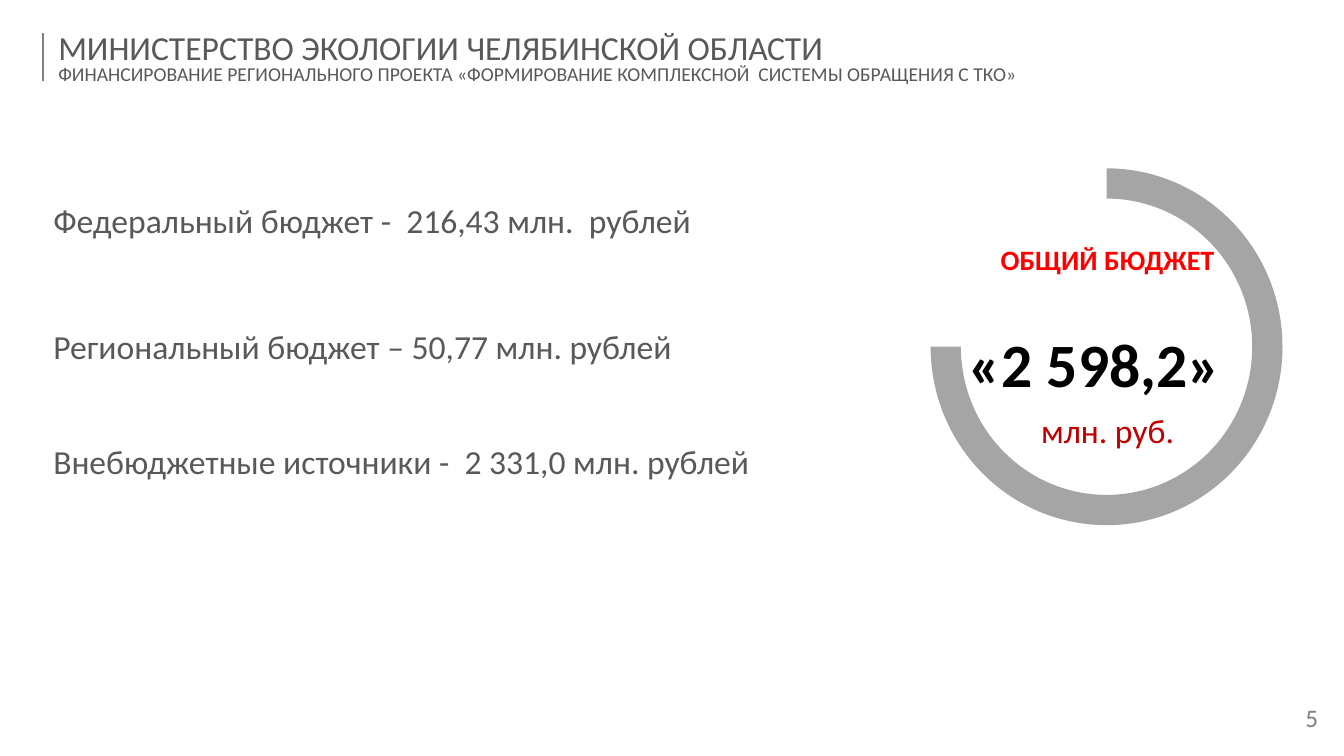
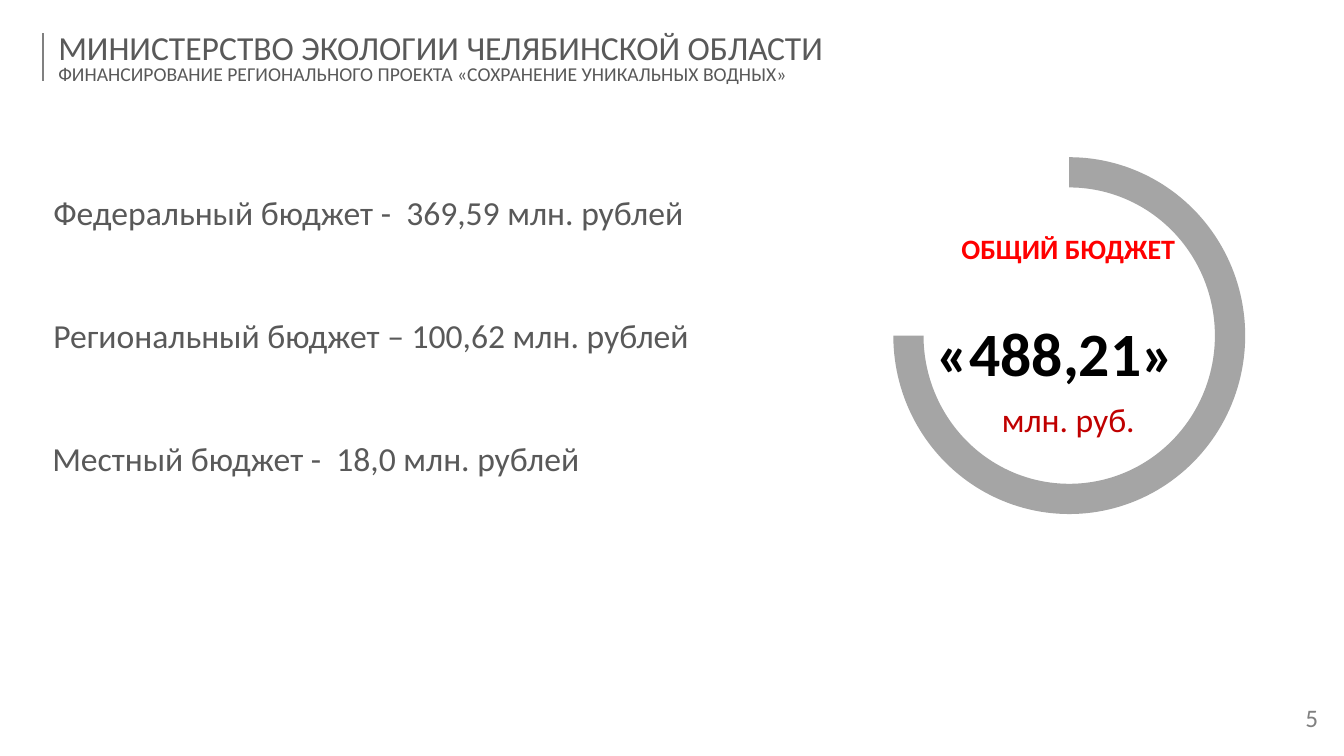
from lxml.etree import SubElement
from pptx import Presentation
from pptx.dml.color import RGBColor
from pptx.enum.shapes import MSO_CONNECTOR as Connector, MSO_SHAPE as Preset
from pptx.enum.text import MSO_ANCHOR as Anchor, PP_ALIGN as Align
from pptx.oxml.ns import qn
from pptx.util import Pt

PX = 9144
FONT = "Calibri"
TEXT, MUTED, RING = "595959", "808080", "A5A5A5"
RED, DARK_RED, BLACK = "FF0000", "C00000", "000000"

MINISTRY = "МИНИСТЕРСТВО ЭКОЛОГИИ ЧЕЛЯБИНСКОЙ ОБЛАСТИ"
PAGE_NUMBER = "5"
TOTAL_LABEL = "ОБЩИЙ БЮДЖЕТ"
TOTAL_UNIT = "млн. руб."

SLIDES = [
    {
        "project": "ФИНАНСИРОВАНИЕ РЕГИОНАЛЬНОГО ПРОЕКТА «ФОРМИРОВАНИЕ КОМПЛЕКСНОЙ  СИСТЕМЫ ОБРАЩЕНИЯ С ТКО»",
        "sources": [
            (43, 193, "Федеральный бюджет -  216,43 млн.  рублей"),
            (43, 318, "Региональный бюджет – 50,77 млн. рублей"),
            (43, 433, "Внебюджетные источники -  2 331,0 млн. рублей"),
        ],
        "total": "«2 598,2»",
        "ring": (923, 167),
        "total_box": (937, 234, 323, 219),
    },
    {
        "project": "ФИНАНСИРОВАНИЕ РЕГИОНАЛЬНОГО ПРОЕКТА «СОХРАНЕНИЕ УНИКАЛЬНЫХ ВОДНЫХ»",
        "sources": [
            (43, 185, "Федеральный бюджет -  369,59 млн. рублей"),
            (43, 308, "Региональный бюджет – 100,62 млн. рублей"),
            (42, 430, "Местный бюджет -  18,0 млн. рублей"),
        ],
        "total": "«488,21»",
        "ring": (886, 156),
        "total_box": (902, 223, 315, 219),
    },
]

SOURCE_SIZE = (832, 50)
RING_SIZE = (349, 354)
RING_THICKNESS = 30
ANGLE_UNIT = 0.6


def rgb(color):
    return RGBColor.from_string(color)


def emu(*lengths):
    return [length * PX for length in lengths]


def add_text(slide, box, paragraphs, align=Align.LEFT, anchor=Anchor.TOP, spacing=None):
    frame = slide.shapes.add_textbox(*emu(*box)).text_frame
    frame.word_wrap = True
    frame.vertical_anchor = anchor
    for index, runs in enumerate(paragraphs):
        paragraph = frame.add_paragraph() if index else frame.paragraphs[0]
        paragraph.alignment = align
        if spacing:
            paragraph.line_spacing = spacing
        for text, size, color, bold in runs:
            run = paragraph.add_run()
            run.text = text
            run.font.name = FONT
            run.font.size = Pt(size)
            run.font.bold = bold
            run.font.color.rgb = rgb(color)


def add_frame(slide, project):
    rule = slide.shapes.add_connector(Connector.STRAIGHT, *emu(43, 33, 43, 80))
    rule.line.color.rgb = rgb(MUTED)
    rule.line.width = Pt(1.5)
    SubElement(rule.element.spPr, qn("a:effectLst"))
    add_text(slide, (1270, 690, 62, 50), [[(PAGE_NUMBER, 18, MUTED, False)]],
             Align.CENTER, Anchor.MIDDLE, 0.8)
    add_text(slide, (48, 26, 1270, 67),
             [[(MINISTRY, 24, TEXT, False)], [(project, 14, TEXT, False)]],
             anchor=Anchor.MIDDLE, spacing=0.8)


def add_total(slide, ring_corner, box, total):
    ring = slide.shapes.add_shape(Preset.BLOCK_ARC, *emu(*ring_corner, *RING_SIZE))
    ring.shadow.inherit = False
    ring.fill.solid()
    ring.fill.fore_color.rgb = rgb(RING)
    ring.line.fill.background()
    ring.adjustments[0] = 270 * ANGLE_UNIT
    ring.adjustments[1] = 180 * ANGLE_UNIT
    ring.adjustments[2] = RING_THICKNESS / min(RING_SIZE)
    add_text(slide, box, [
        [(TOTAL_LABEL, 20, RED, True)],
        [(total, 44, BLACK, True), (" ", 80, BLACK, True)],
        [(TOTAL_UNIT, 24, DARK_RED, False)],
    ], Align.CENTER, Anchor.MIDDLE)


def main():
    presentation = Presentation()
    presentation.slide_width, presentation.slide_height = emu(1333, 750)
    for content in SLIDES:
        slide = presentation.slides.add_slide(presentation.slide_layouts[6])
        add_frame(slide, content["project"])
        add_total(slide, content["ring"], content["total_box"], content["total"])
        for left, top, text in content["sources"]:
            add_text(slide, (left, top, *SOURCE_SIZE), [[(text, 24, TEXT, False)]], Align.JUSTIFY)
    presentation.save("out.pptx")


if __name__ == "__main__":
    main()
